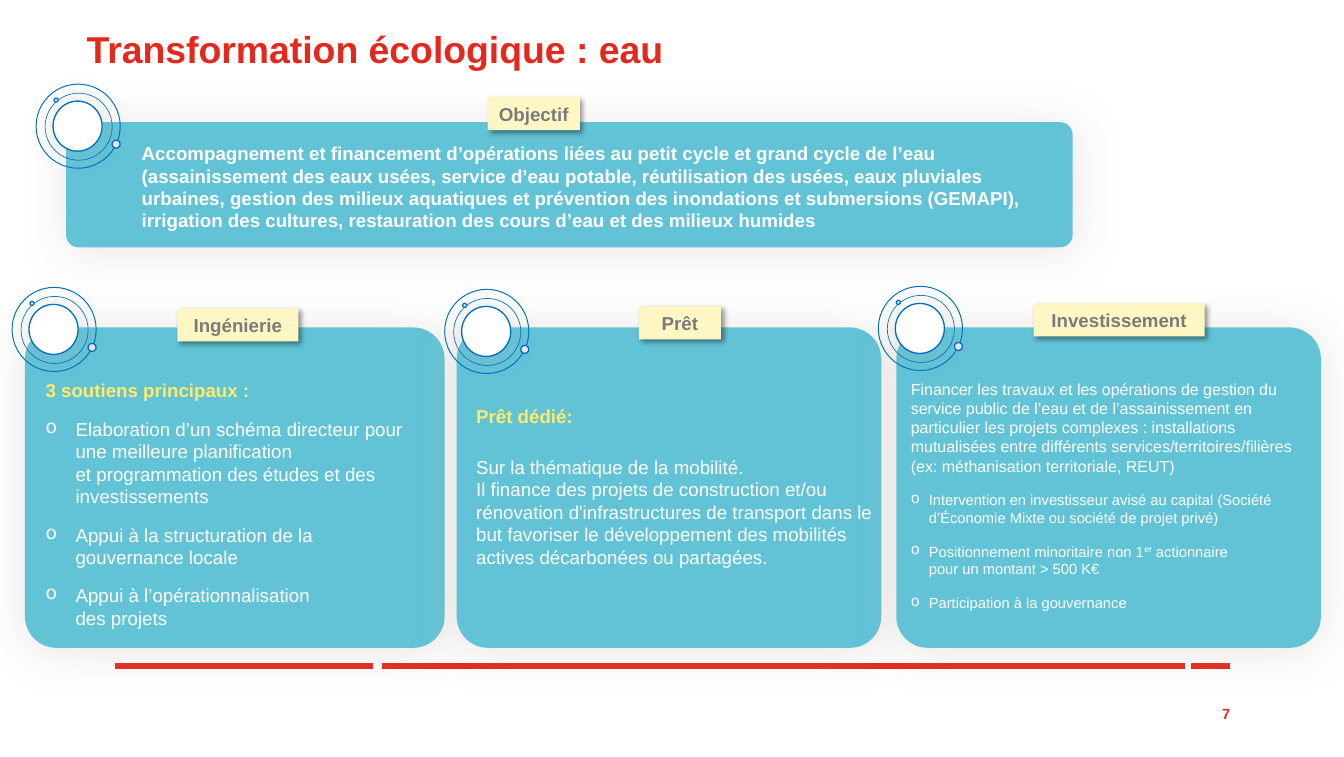
import pptx
import pptx.util
import pptx.dml.color
import pptx.enum.shapes
import pptx.enum.text
import pptx.oxml
import pptx.oxml.ns
import lxml.etree

SHAPE = pptx.enum.shapes.MSO_SHAPE
ALIGN = pptx.enum.text.PP_ALIGN
ANCHOR = pptx.enum.text.MSO_ANCHOR
RED, TEAL, BLUE = "E5281D", "62C3D6", "0070C0"
CREAM, GREY, GOLD, WHITE = "FFF7C3", "7B7B7B", "FFEB68", "FFFFFF"
CARD_SHADE = ("B7ABA7", 30, 35, 2, 90)
CORE_SHADE = ("B7ABA7", 25, 21, 0, 0)
TAG_SHADE = ("000000", 40, 4, 3, 45)


def px(n):
    return pptx.util.Emu(n * 9525)


def tint(code):
    return pptx.dml.color.RGBColor.from_string(code)


def child(node, tag, **attrs):
    made = lxml.etree.SubElement(node, pptx.oxml.ns.qn(tag))
    for key, val in attrs.items():
        made.set(key, str(val))
    return made


class Deck:
    def __init__(self, wide, high):
        self.file = pptx.Presentation()
        self.file.slide_width, self.file.slide_height = px(wide), px(high)
        self.slide = self.file.slides.add_slide(self.file.slide_layouts[6])
        self.font = "Arial"

    def line(self, left, right, y):
        rule = self.slide.shapes.add_connector(
            pptx.enum.shapes.MSO_CONNECTOR.STRAIGHT, px(left), px(y), px(right), px(y))
        rule.line.color.rgb = tint(RED)
        rule.line.width = pptx.util.Pt(4)
        child(rule._element.spPr, "a:effectLst")

    def shape(self, kind, box, fill=None, edge=None, shade=None, host=None):
        """Draw a preset shape; shade is colour, opacity %, blur pt, distance pt, angle."""
        item = (host or self.slide).shapes.add_shape(kind, *map(px, box))
        if fill:
            item.fill.solid()
            item.fill.fore_color.rgb = tint(fill)
        else:
            item.fill.background()
        if edge:
            item.line.color.rgb = tint(BLUE)
            item.line.width = pptx.util.Pt(edge)
        else:
            item.line.fill.background()
        item.shadow.inherit = False
        if shade:
            hue, alpha, blur, dist, angle = shade
            effects = item._element.spPr.find(pptx.oxml.ns.qn("a:effectLst"))
            outer = child(effects, "a:outerShdw", blurRad=blur * 12700,
                          dist=dist * 12700, dir=angle * 60000, algn="ctr", rotWithShape=0)
            child(child(outer, "a:srgbClr", val=hue), "a:alpha", val=alpha * 1000)
        return item

    def card(self, box):
        self.shape(SHAPE.ROUNDED_RECTANGLE, box, TEAL, shade=CARD_SHADE).adjustments[0] = 0.098

    def ring(self, x, y):
        """Draw the orbit badge: two circles, two dots and a white core."""
        group = self.slide.shapes.add_group_shape()
        for dx, dy, wide, high, fill, edge, shade in (
                (0, 0, 84, 84, None, 0.75, None),
                (76, 56, 8, 8, "ECE5F1", 1, None),
                (9, 9, 67, 67, None, 0.5, None),
                (18, 14, 4, 4, "E0F3E2", 1, None),
                (17, 17, 49, 50, WHITE, 1, CORE_SHADE)):
            self.shape(SHAPE.OVAL, (x + dx, y + dy, wide, high), fill, edge, shade, group)

    def tag(self, x, y, wide, text):
        frame = self.shape(SHAPE.RECTANGLE, (x, y, wide, 33), CREAM, shade=TAG_SHADE).text_frame
        frame.word_wrap = True
        frame.vertical_anchor = ANCHOR.MIDDLE
        self.para(frame, text, 14, GREY, True, align=ALIGN.CENTER)

    def text(self, box, anchor=ANCHOR.TOP):
        frame = self.slide.shapes.add_textbox(*map(px, box)).text_frame
        frame.word_wrap = True
        frame.vertical_anchor = anchor
        return frame

    def para(self, frame, text, size, hue, bold=False, before=0, indent=0, align=ALIGN.LEFT):
        """Add a paragraph; ^ encloses superscript, ~ is a no-break space."""
        para = frame.paragraphs[0]
        if para.runs:
            para = frame.add_paragraph()
        para.alignment = align
        if before:
            para.space_before = pptx.util.Pt(before)
        if indent:
            props = para._p.get_or_add_pPr()
            props.set("marL", str(px(indent)))
            props.set("indent", str(px(-indent)))
            child(props, "a:buChar", char="o")
        for i, part in enumerate(text.replace("~", chr(160)).split("^")):
            for j, row in enumerate(part.split("\n")):
                if j:
                    para.add_line_break()
                run = para.add_run()
                run.text = row
                run.font.name = self.font
                run.font.size = pptx.util.Pt(size)
                run.font.bold = bold
                run.font.color.rgb = tint(hue)
                if i % 2:
                    run._r.get_or_add_rPr().set("baseline", "30000")
        return para

    def list(self, frame, items, size, indent):
        for item in items:
            self.para(frame, item, size, WHITE, before=12, indent=indent)


def main():
    deck = Deck(1342, 756)
    for left, right in ((115, 372), (381, 1183), (1189, 1228)):
        deck.line(left, right, 665)
    number = deck.text((1183, 703, 55, 19), ANCHOR.MIDDLE)
    deck.para(number, "7", 11, RED, True, align=ALIGN.RIGHT)
    title = deck.text((77, 26, 1023, 49))
    deck.para(title, "Transformation écologique : eau", 28, RED, True).line_spacing = 0.9

    for card, ring, tag in (
            ((66, 122, 1005, 125), (36, 84), (487, 97, 92, "Objectif")),
            ((25, 327, 419, 320), (12, 287), (177, 308, 121, "Ingénierie")),
            ((456, 327, 424, 320), (444, 289), (638, 306, 82, "Prêt")),
            ((895, 327, 424, 320), (877, 286), (1032, 303, 171, "Investissement"))):
        deck.card(card)
        deck.ring(*ring)
        deck.tag(*tag)

    goal = deck.text((132, 137, 932, 123))
    deck.para(goal, "Accompagnement et financement d’opérations liées au petit cycle et grand "
              "cycle de l’eau (assainissement des eaux usées, service d’eau potable, "
              "réutilisation des usées, eaux pluviales urbaines, gestion des milieux "
              "aquatiques et prévention des inondations et submersions (GEMAPI), irrigation "
              "des cultures, restauration des cours d’eau et des milieux humides",
              14, WHITE, True)

    study = deck.text((36, 374, 395, 262))
    deck.para(study, "3 soutiens principaux :", 14, GOLD, True)
    deck.list(study, (
        "Elaboration d’un schéma directeur pour une meilleure planification "
        "et~programmation des études et des investissements",
        "Appui à la structuration de~la gouvernance locale",
        "Appui à l’opérationnalisation\ndes projets"), 14, 30)

    loan = deck.text((466, 400, 415, 175))
    deck.para(loan, "Prêt dédié:", 14, GOLD, True)
    deck.para(loan, "Sur la thématique de la mobilité.", 14, WHITE, before=21)
    deck.para(loan, "Il finance des projets de construction et/ou rénovation "
              "d'infrastructures de transport dans le but favoriser le développement des "
              "mobilités actives décarbonées ou partagées.", 14, WHITE)

    stake = deck.text((900, 374, 408, 262))
    deck.para(stake, "Financer les travaux et les opérations de gestion du service public de "
              "l’eau et de l’assainissement en particulier les projets complexes : "
              "installations mutualisées entre différents services/territoires/filières",
              12, WHITE)
    deck.para(stake, "(ex: méthanisation territoriale, REUT)", 12, WHITE)
    deck.list(stake, (
        "Intervention en~investisseur avisé au~capital (Société d’Économie Mixte "
        "ou~société de~projet privé)",
        "Positionnement minoritaire non 1^er^~actionnaire\npour un montant > 500 K€",
        "Participation à la gouvernance"), 11, 18)
    deck.file.save("out.pptx")


if __name__ == "__main__":
    main()
